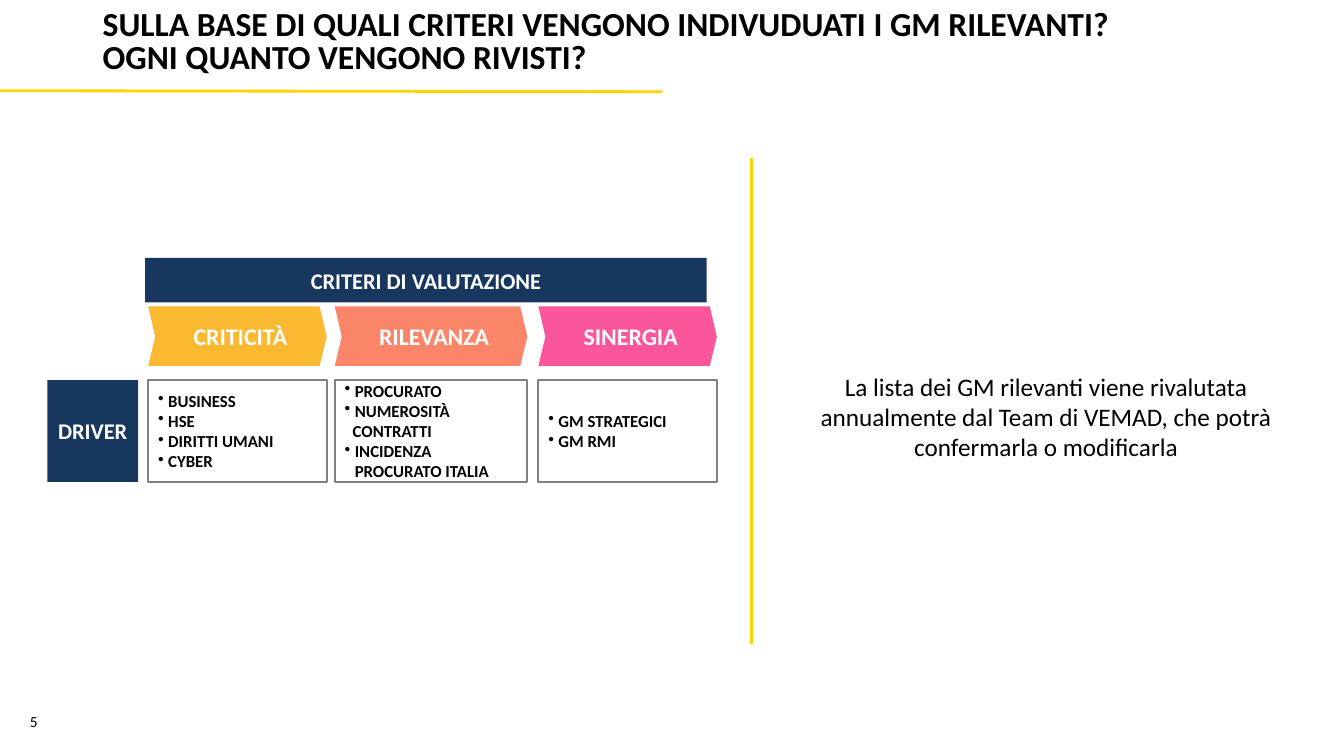
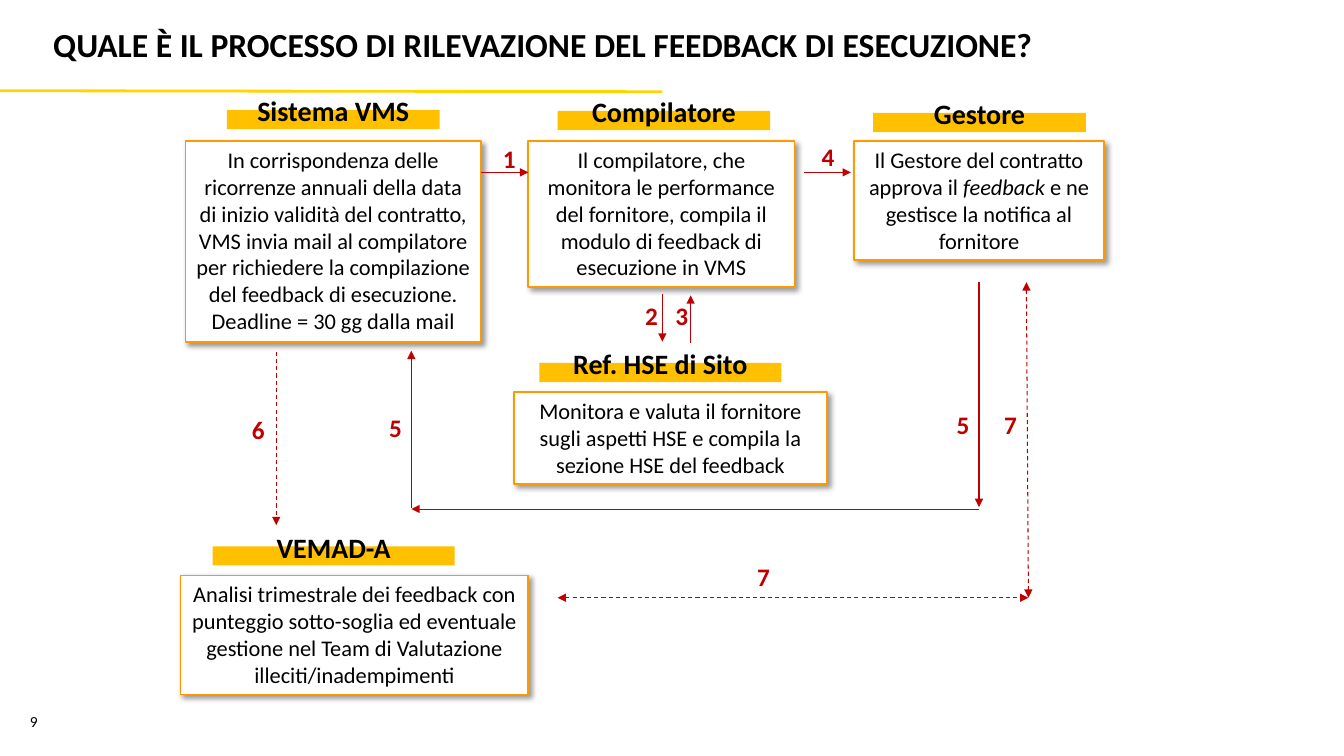
from pptx import Presentation
from pptx.dml.color import RGBColor
from pptx.enum.dml import MSO_LINE
from pptx.enum.shapes import MSO_CONNECTOR, MSO_SHAPE
from pptx.enum.text import MSO_ANCHOR, PP_ALIGN
from pptx.oxml.ns import qn
from pptx.util import Pt
from lxml.etree import SubElement

PX = 9144
BLACK = RGBColor(0x00, 0x00, 0x00)
WHITE = RGBColor(0xFF, 0xFF, 0xFF)
YELLOW = RGBColor(0xFF, 0xD5, 0x00)
NAVY = RGBColor(0x17, 0x37, 0x5E)
GRAY = RGBColor(0x80, 0x80, 0x80)
ORANGE = RGBColor(0xFF, 0x99, 0x00)
AMBER = RGBColor(0xFF, 0xC0, 0x00)
RED = RGBColor(0xC0, 0x00, 0x00)
GOLD = RGBColor(0xFB, 0xB8, 0x31)
CORAL = RGBColor(0xFB, 0x85, 0x69)
PINK = RGBColor(0xFB, 0x56, 0x9C)

BASE = {"name": "Calibri", "size": Pt(16), "bold": False, "color": BLACK}
BODY = BASE
TITLE = BASE | {"size": Pt(24), "bold": True}
PAGE = BASE | {"size": Pt(11)}
NOTE = BASE | {"size": Pt(18)}
ITEM = BASE | {"size": Pt(12), "bold": True}
HEAD = BASE | {"size": Pt(20), "bold": True}
STEP = BASE | {"size": Pt(18), "bold": True, "color": RED}
BAND = BASE | {"bold": True, "color": WHITE}
ARROW = BAND | {"size": Pt(17)}

CRITERIA = [
    ("CRITICITÀ", GOLD, 147, 177, ["• BUSINESS", "• HSE", "• DIRITTI UMANI", "• CYBER"]),
    ("RILEVANZA", CORAL, 332, 191,
     ["• PROCURATO", "• NUMEROSITÀ", "CONTRATTI", "• INCIDENZA PROCURATO ITALIA"]),
    ("SINERGIA", PINK, 534, 177, ["• GM STRATEGICI", "• GM RMI"]),
]
BANDS = [("DRIVER", (47, 377, 90, 101)), ("CRITERI DI VALUTAZIONE", (144, 256, 557, 44))]
REVIEW = ("La lista dei GM rilevanti viene rivalutata annualmente dal Team di VEMAD, "
          "che potrà confermarla o modificarla")

ROLES = [
    ("Sistema VMS", (225, 88, 211), (184, 140, 293, 199),
     ["In corrispondenza delle ricorrenze annuali della data di inizio validità del contratto, "
      "VMS invia mail al compilatore per richiedere la compilazione del feedback di esecuzione.",
      "Deadline = 30 gg dalla mail"]),
    ("Compilatore", (553, 89, 211), (524, 140, 264, 145),
     ["Il compilatore, che monitora le performance del fornitore, compila il modulo di "
      "feedback di esecuzione in VMS"]),
    ("Gestore", (866, 91, 211), (847, 140, 248, 118),
     ["Il Gestore del contratto approva il _feedback _e ne gestisce la notifica al fornitore"]),
    ("Ref. HSE di Sito", (535, 339, 240), (510, 389, 310, 91),
     ["Monitora e valuta il fornitore sugli aspetti HSE e compila la sezione HSE del feedback"]),
    ("VEMAD-A", (211, 521, 240), (179, 571, 345, 118),
     ["Analisi trimestrale dei feedback con punteggio sotto-soglia ed eventuale gestione nel "
      "Team di Valutazione illeciti/inadempimenti"]),
]
STEPS = [("1", 489, 137), ("2", 630, 293), ("3", 660, 293), ("4", 805, 135), ("5", 939, 401),
         ("5", 376, 404), ("6", 240, 406), ("7", 741, 552), ("7", 986, 401)]
SOLID = [(477, 171, 524, 171), (657, 292, 657, 339), (685, 340, 685, 293),
         (797, 171, 844, 171), (971, 280, 971, 503), (971, 505, 408, 505), (408, 504, 408, 348)]
DASHED = [((274, 349, 274, 521), ("tail",)),
          ((553, 593, 1020, 593), ("head", "tail")),
          ((1018, 280, 1020, 593), ("head", "tail"))]


def scale(nums):
    return [n * PX for n in nums]


def style(obj, values):
    for key, value in values.items():
        if key == "color":
            obj.color.rgb = value
        else:
            setattr(obj, key, value)


def bullet(para):
    props = para._p.get_or_add_pPr()
    props.set("marL", str(10 * PX))
    props.set("indent", str(-10 * PX))
    SubElement(props, qn("a:buChar")).set("char", "•")


def write(shape, paras, look, align=PP_ALIGN.CENTER, anchor=MSO_ANCHOR.TOP,
          pad=(10, 5, 10, 5), space=None):
    frame = shape.text_frame
    sides = ("margin_left", "margin_top", "margin_right", "margin_bottom")
    style(frame, {"word_wrap": True, "vertical_anchor": anchor} | dict(zip(sides, scale(pad))))
    for i, text in enumerate(paras):
        para = frame.add_paragraph() if i else frame.paragraphs[0]
        style(para, {"alignment": align, "line_spacing": space})
        if text.startswith("• "):
            bullet(para)
            text = text[2:]
        elif look is ITEM:
            para._p.get_or_add_pPr().set("marL", str(8 * PX))
        for j, part in enumerate(text.split("_")):
            for k, line in enumerate(part.split("\n")):
                if k:
                    para.add_line_break()
                run = para.add_run()
                run.text = line
                style(run.font, look | {"italic": j % 2 == 1})


def label(slide, place, text, look, **opts):
    write(slide.shapes.add_textbox(*scale(place)), [text], look, **opts)


def paint(shape, fill=None, edge=None, width=1):
    shape.shadow.inherit = False
    if fill is None:
        shape.fill.background()
    else:
        shape.fill.solid()
        shape.fill.fore_color.rgb = fill
    if edge is None:
        shape.line.fill.background()
    else:
        style(shape.line, {"color": edge, "width": Pt(width)})
    return shape


def rect(slide, place, *look):
    return paint(slide.shapes.add_shape(MSO_SHAPE.RECTANGLE, *scale(place)), *look)


def shade(shape):
    effects = shape._element.spPr.find(qn("a:effectLst"))
    outer = SubElement(effects, qn("a:outerShdw"), blurRad=str(Pt(4)), dist=str(Pt(3)),
                       dir="2700000", algn="tl", rotWithShape="0")
    color = SubElement(outer, qn("a:srgbClr"), val=str(BLACK))
    SubElement(color, qn("a:alpha"), val="40000")


def link(slide, ends, color, width, heads=(), dash=None):
    line = slide.shapes.add_connector(MSO_CONNECTOR.STRAIGHT, *scale(ends))
    style(line.line, {"color": color, "width": Pt(width), "dash_style": dash})
    for end in heads:
        SubElement(line.line._ln, qn(f"a:{end}End"), type="triangle")
    SubElement(line._element.spPr, qn("a:effectLst"))


def chevron(slide, x, y, w, h, fill):
    tip = 7
    path = slide.shapes.build_freeform(x, y, scale=PX)
    path.add_line_segments([(x + tip, y + h / 2), (x, y + h), (x + w - tip, y + h),
                            (x + w, y + h / 2), (x + w - tip, y)], close=True)
    return paint(path.convert_to_shape(), fill)


def start(deck, title, left, top, page):
    slide = deck.slides.add_slide(deck.slide_layouts[6])
    link(slide, (0, 90, 657, 91), YELLOW, 2)
    label(slide, (left, top, 1174, 85), title, TITLE, align=PP_ALIGN.LEFT,
          anchor=MSO_ANCHOR.MIDDLE, space=Pt(24))
    label(slide, (0, 694, 67, 36), page, PAGE, anchor=MSO_ANCHOR.BOTTOM)
    return slide


def criteria(deck):
    slide = start(deck, "SULLA BASE DI QUALI CRITERI VENGONO INDIVUDUATI I GM RILEVANTI?\n"
                  "OGNI QUANTO VENGONO RIVISTI?", 92, 0, "5")
    mid = {"anchor": MSO_ANCHOR.MIDDLE, "pad": (10, 10, 10, 10)}
    for name, fill, x, w, items in CRITERIA:
        write(chevron(slide, x, 304, w, 59, fill), [name], ARROW, **mid | {"pad": (16, 10, 10, 10)})
        write(rect(slide, (x, 377, w, 101), None, GRAY, 1.5), items, ITEM,
              align=PP_ALIGN.LEFT, **mid)
    for name, place in BANDS:
        write(rect(slide, place, NAVY), [name], BAND, **mid)
    label(slide, (761, 363, 553, 101), REVIEW, NOTE)
    link(slide, (745, 157, 745, 639), YELLOW, 2.25)


def process(deck):
    slide = start(deck, "QUALE È IL PROCESSO DI RILEVAZIONE DEL FEEDBACK DI ESECUZIONE?",
                  43, 5, "9")
    for name, (x, y, w), place, paras in ROLES:
        box = rect(slide, place, WHITE, ORANGE, 1.25)
        shade(box)
        write(box, paras, BODY)
        rect(slide, (x, y + 21, w, 19), AMBER)
        label(slide, (x, y, w, 44), name, HEAD)
    for ends in SOLID:
        link(slide, ends, RED, 0.75, ("tail",))
    for ends, heads in DASHED:
        link(slide, ends, RED, 0.75, heads, MSO_LINE.DASH)
    for mark, x, y in STEPS:
        label(slide, (x, y, 25, 40), mark, STEP)


def main():
    deck = Presentation()
    style(deck, {"slide_width": 1333 * PX, "slide_height": 750 * PX})
    criteria(deck)
    process(deck)
    deck.save("out.pptx")


if __name__ == "__main__":
    main()
